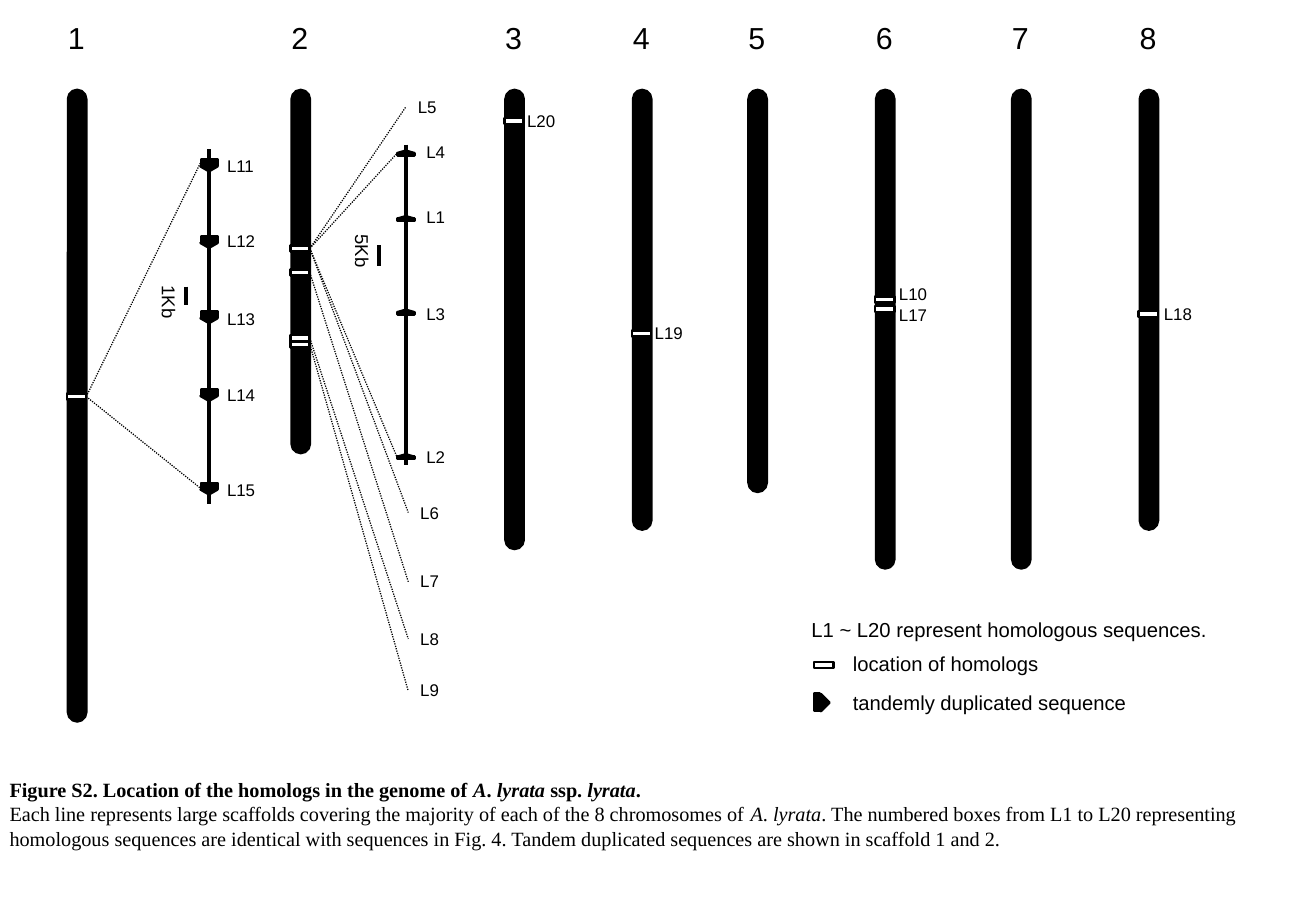
from dataclasses import dataclass

import lxml.etree
import pptx
import pptx.dml.color
import pptx.enum.dml
import pptx.enum.shapes
import pptx.enum.text
import pptx.oxml.ns
import pptx.shapes.autoshape
import pptx.shapes.connector
import pptx.slide
import pptx.text.text
import pptx.util

BLACK = pptx.dml.color.RGBColor(0, 0, 0)
WHITE = pptx.dml.color.RGBColor(255, 255, 255)
EMU_PER_PX = 9144  # 100 px to the inch
SHAPE = pptx.enum.shapes.MSO_SHAPE
ALIGN = pptx.enum.text.PP_ALIGN
CHROMOSOME_TOP, CHROMOSOME_WIDTH = 74, 15
NUMBER = {"name": "Arial", "size": pptx.util.Pt(18)}
LABEL = {"name": "Arial", "size": pptx.util.Pt(10)}
SCALE = {"name": "Arial", "size": pptx.util.Pt(11)}
LEGEND = {"name": "Arial", "size": pptx.util.Pt(12)}
CAPTION = {"name": "Times New Roman", "size": pptx.util.Pt(12)}


@dataclass(frozen=True)
class Chromosome:
    left: int
    length: int
    loci: tuple[int, ...] = ()


@dataclass(frozen=True)
class Label:
    text: str
    left: int
    top: int


@dataclass(frozen=True)
class Link:
    chromosome: int
    locus: int
    x: int
    y: int


@dataclass(frozen=True)
class Cluster:
    """A magnified stretch of tandem repeats; thickness is the bar, tip the triangle."""
    x: int
    top: int
    bottom: int
    repeats: tuple[int, ...]
    thickness: int
    tip: int
    tip_offset: int
    tip_rotation: int
    scale_x: int
    scale_top: int
    scale_bottom: int
    scale_label: Label


CHROMOSOMES = (
    Chromosome(56, 520, (324,)),
    Chromosome(240, 299, (202, 222, 276, 281)),
    Chromosome(416, 378, (97,)),
    Chromosome(521, 362, (272,)),
    Chromosome(616, 331),
    Chromosome(721, 394, (244, 252)),
    Chromosome(833, 394),
    Chromosome(938, 362, (256,)),
)
LINKS = (
    Link(1, 324, 165, 134), Link(1, 324, 165, 402),
    Link(2, 202, 327, 126), Link(2, 202, 327, 377),
    Link(2, 202, 334, 88), Link(2, 202, 336, 422),
    Link(2, 222, 336, 479), Link(2, 276, 336, 526), Link(2, 281, 336, 569),
)
CLUSTERS = (
    Cluster(172, 123, 415, (127, 190, 252, 316, 393), 5, 4, 10, 180,
            153, 236, 251, Label("1Kb", 115, 234)),
    Cluster(334, 119, 383, (120, 174, 251, 370), 2, 2, 4, 0,
            312, 202, 219, Label("5Kb", 274, 192)),
)
LABELS = (
    Label("L11", 177, 123), Label("L12", 177, 185), Label("L13", 177, 249),
    Label("L14", 177, 312), Label("L15", 177, 390),
    Label("L5", 334, 75), Label("L4", 341, 112), Label("L1", 341, 165),
    Label("L3", 341, 245), Label("L2", 341, 363), Label("L6", 336, 409),
    Label("L7", 336, 465), Label("L8", 336, 513), Label("L9", 336, 555),
    Label("L20", 424, 86), Label("L19", 529, 261), Label("L18", 948, 245),
)
# Runs alternate between upright and italic.
CAPTION_TITLE = ("Figure S2. Location of the homologs in the genome of ", "A", ". ",
                 "lyrata", " ssp. ", "lyrata", ".")
CAPTION_BODY = (
    "Each line represents large scaffolds covering the majority of each of the 8 chromosomes of ",
    "A", ". ", "lyrata",
    ". The numbered boxes from L1 to L20 representing homologous sequences are identical with "
    "sequences in Fig. 4. Tandem duplicated sequences are shown in scaffold 1 and 2.",
)


def px(n: int) -> pptx.util.Emu:
    return pptx.util.Emu(n * EMU_PER_PX)


def style_font(font: pptx.text.text.Font, fmt: dict) -> None:
    for name, value in fmt.items():
        setattr(font, name, value)
    font.color.rgb = BLACK


def add_box(s: pptx.slide.Slide, kind: SHAPE, left: int, top: int, width: int, height: int,
            rotation: int = 0,
            fill: pptx.dml.color.RGBColor = BLACK) -> pptx.shapes.autoshape.Shape:
    sp = s.shapes.add_shape(kind, px(left), px(top), px(width), px(height))
    sp.rotation = rotation
    sp.shadow.inherit = False
    sp.fill.solid()
    sp.fill.fore_color.rgb = fill
    sp.line.color.rgb = BLACK
    sp.line.width = pptx.util.Pt(1.5)
    return sp


def add_locus(s: pptx.slide.Slide, left: int, top: int) -> pptx.shapes.autoshape.Shape:
    return add_box(s, SHAPE.RECTANGLE, left, top, 16, 5, fill=WHITE)


def add_line(s: pptx.slide.Slide, x1: int, y1: int, x2: int, y2: int,
             width: float = 2) -> pptx.shapes.connector.Connector:
    line = s.shapes.add_connector(pptx.enum.shapes.MSO_CONNECTOR.STRAIGHT,
                                  px(x1), px(y1), px(x2), px(y2))
    line.line.color.rgb = BLACK
    line.line.width = pptx.util.Pt(width)
    lxml.etree.SubElement(line._element.spPr, pptx.oxml.ns.qn("a:effectLst"))
    return line


def add_text(s: pptx.slide.Slide, paragraphs: tuple[tuple[str, ...], ...], left: int, top: int,
             width: int, height: int, fmt: dict, wrap: bool = False, rotation: int = 0,
             align: ALIGN = ALIGN.LEFT) -> pptx.text.text.TextFrame:
    """Write paragraphs whose runs alternate between upright and italic."""
    sp = s.shapes.add_textbox(px(left), px(top), px(width), px(height))
    sp.rotation = rotation
    tf = sp.text_frame
    tf.word_wrap = wrap
    tf.auto_size = pptx.enum.text.MSO_AUTO_SIZE.SHAPE_TO_FIT_TEXT
    for i, runs in enumerate(paragraphs):
        p = tf.add_paragraph() if i else tf.paragraphs[0]
        p.alignment = align
        for j, text in enumerate(runs):
            r = p.add_run()
            r.text = text
            style_font(r.font, {**fmt, "italic": j % 2 == 1})
    return tf


def add_cluster(s: pptx.slide.Slide, c: Cluster) -> None:
    add_line(s, c.x, c.top, c.x, c.bottom)
    for top in c.repeats:
        add_box(s, SHAPE.RECTANGLE, c.x - c.thickness // 2, top, c.thickness, 14, 90)
        add_box(s, SHAPE.ISOSCELES_TRIANGLE, c.x - 7, top + c.tip_offset, 14, c.tip,
                c.tip_rotation)
    add_line(s, c.scale_x, c.scale_top, c.scale_x, c.scale_bottom)
    add_text(s, ((c.scale_label.text,),), c.scale_label.left, c.scale_label.top, 48, 29,
             SCALE, rotation=90, align=ALIGN.CENTER)


def add_legend(s: pptx.slide.Slide) -> None:
    add_text(s, (("L1 ~ L20 represent homologous sequences.",),), 658, 503, 347, 30,
             LEGEND, wrap=True)
    add_locus(s, 670, 545)
    add_text(s, (("location of homologs",),), 692, 531, 175, 30, LEGEND)
    add_box(s, SHAPE.RECTANGLE, 670, 571, 5, 14)
    add_box(s, SHAPE.ISOSCELES_TRIANGLE, 672, 575, 14, 7, 90)
    add_text(s, (("tandemly duplicated sequence",),), 692, 563, 248, 30, LEGEND)


def main() -> None:
    prs = pptx.Presentation()
    prs.slide_width, prs.slide_height = px(1083), px(750)
    s = prs.slides.add_slide(prs.slide_layouts[6])

    loci = {}
    for number, c in enumerate(CHROMOSOMES, 1):
        body = add_box(s, SHAPE.ROUNDED_RECTANGLE, c.left, CHROMOSOME_TOP,
                       CHROMOSOME_WIDTH, c.length)
        body.adjustments[0] = 0.5
        add_text(s, ((str(number),),), c.left - 10, 11, 34, 40, NUMBER)
        for top in c.loci:
            loci[number, top] = add_locus(s, c.left - 1, top)

    for link in LINKS:
        line = add_line(s, 0, 0, link.x, link.y, 0.75)
        line.line.dash_style = pptx.enum.dml.MSO_LINE.ROUND_DOT
        line.begin_connect(loci[link.chromosome, link.locus], 3)
    for cluster in CLUSTERS:
        add_cluster(s, cluster)
    for label in LABELS:
        width = 44 if len(label.text) == 3 else 36
        add_text(s, ((label.text,),), label.left, label.top, width, 27, LABEL)
    add_text(s, (("L10",), ("L17",)), 730, 229, 44, 44, LABEL)

    add_legend(s)
    caption = add_text(s, (CAPTION_TITLE, CAPTION_BODY), -2, 635, 1085, 71, CAPTION, wrap=True)
    for r in caption.paragraphs[0].runs:
        r.font.bold = True
    prs.save("out.pptx")


if __name__ == "__main__":
    main()
